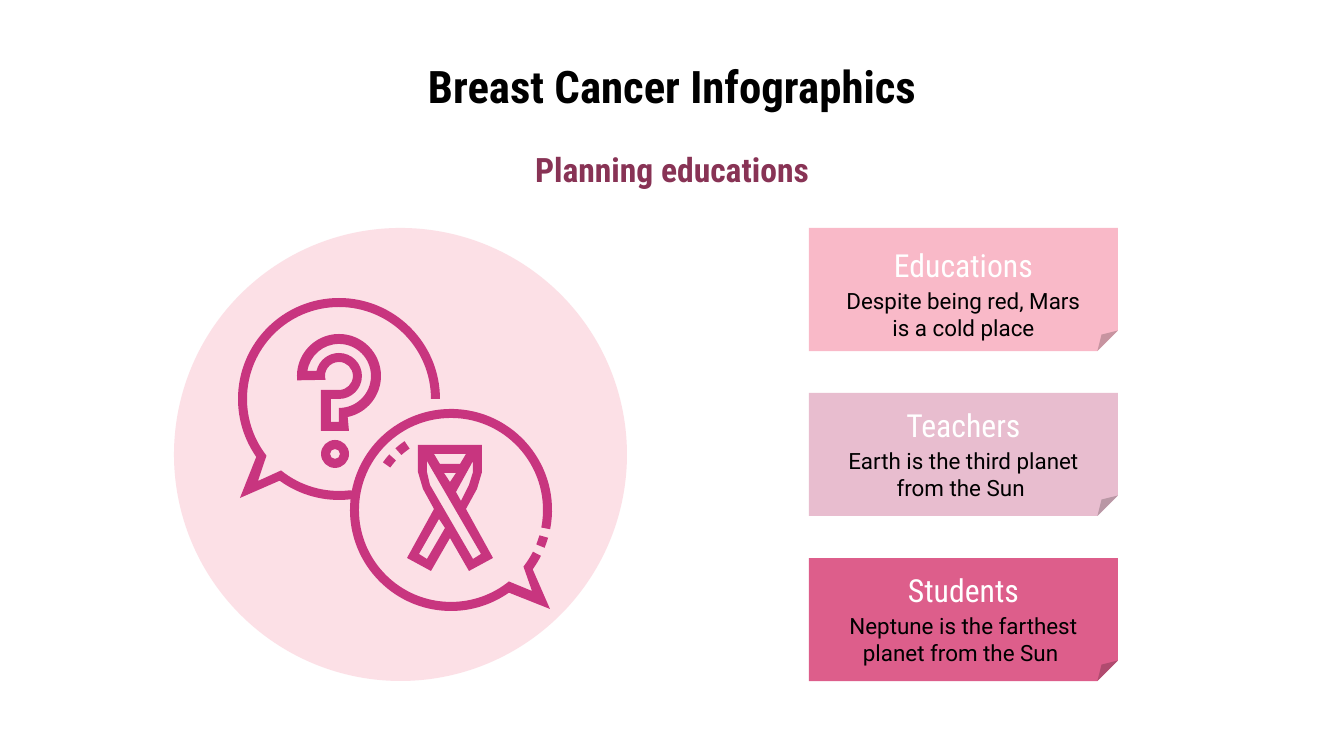
from dataclasses import dataclass
from math import cos, radians, sin, tan

from lxml import etree
from pptx import Presentation
from pptx.dml.color import RGBColor
from pptx.enum.shapes import MSO_SHAPE
from pptx.enum.text import MSO_ANCHOR, PP_ALIGN
from pptx.oxml.ns import qn
from pptx.util import Emu, Pt

ELLIPSE = MSO_SHAPE.OVAL
NOTE = MSO_SHAPE.FOLDED_CORNER
TOP, MIDDLE = MSO_ANCHOR.TOP, MSO_ANCHOR.MIDDLE
CENTER = PP_ALIGN.CENTER
EMU_PER_PX = 914400 / 134.4


@dataclass(frozen=True)
class Theme:
    heading_font: str = "Roboto Condensed"
    body_font: str = "Roboto"
    ink: str = "000000"
    white: str = "FFFFFF"
    plum: str = "883355"
    magenta: str = "C8357F"
    pink: str = "F9B9C8"
    mauve: str = "E8BDCF"
    rose: str = "DD5E8B"
    title_size: int = 24
    subtitle_size: int = 18
    card_title_size: int = 17
    body_size: int = 12


THEME = Theme()

# Speech bubbles: centre, outer and inner radius of the outline
QUESTION_CENTER, RIBBON_CENTER = (339, 399), (451, 510)
OUTER, INNER = 101, 92

# Heading, body, fill, extra text offset of each card
CARDS = [
    ("Educations", "Despite being red, Mars is a cold place", THEME.pink, 5),
    ("Teachers", "Earth is the third planet from the Sun ", THEME.mauve, 0),
    ("Students", "Neptune is the farthest planet from the Sun ", THEME.rose, 0),
]


def px(length):
    return Emu(round(length * EMU_PER_PX))


def paint(shape, color):
    shape.fill.solid()
    shape.fill.fore_color.rgb = RGBColor.from_string(color)
    shape.line.fill.background()
    shape.shadow.inherit = False


def add_filled(slide, kind, box, color):
    shape = slide.shapes.add_shape(kind, *map(px, box))
    paint(shape, color)
    return shape


def set_opacity(shape, percent):
    color = shape.fill._xPr.find(".//" + qn("a:srgbClr"))
    etree.SubElement(color, qn("a:alpha")).set("val", str(percent * 1000))


def add_text(slide, box, wording, font, size, color, bold=False, anchor=MIDDLE):
    frame = slide.shapes.add_textbox(*map(px, box)).text_frame
    frame.word_wrap = True
    frame.vertical_anchor = anchor
    frame.margin_left = frame.margin_right = px(13)
    frame.margin_top = frame.margin_bottom = px(13)
    paragraph = frame.paragraphs[0]
    paragraph.text = wording
    paragraph.alignment = CENTER
    paragraph.font.name = font
    paragraph.font.size = Pt(size)
    paragraph.font.bold = bold
    paragraph.font.color.rgb = RGBColor.from_string(color)


def corners(*points):
    """Straight segments: each holds its end point only."""
    return [[point] for point in points]


def arc(center, radius, start, end):
    """A line to the arc's start, then Bézier segments (two controls and an end).

    Degrees run clockwise from the right; the arc is split at its extremes.
    """
    def at(angle, reach=0):
        a = radians(angle)
        return (center[0] + radius * (cos(a) - reach * sin(a)),
                center[1] + radius * (sin(a) + reach * cos(a)))

    low, high = sorted((start, end))
    extremes = [a for a in range(-360, 540, 90) if low + 16 < a < high - 16]
    stops = sorted([start, *extremes, end], reverse=end < start)
    segments = [[at(start)]]
    for a, b in zip(stops, stops[1:]):
        reach = 4 / 3 * tan(radians(b - a) / 4)
        segments.append([at(a, reach), at(b, -reach), at(b)])
    return segments


def ring_segment(center, outer, inner, start, end):
    return arc(center, outer, start, end) + arc(center, inner, end, start)


def mirrored(axis, right_half):
    """Close a symmetric outline from its right half, given as offsets from the axis."""
    right = [(axis + x, y) for x, y in right_half]
    left = [(axis - x, y) for x, y in reversed(right_half) if x]
    return corners(*right, *left)


def add_outline(group, *contours):
    """Add one filled outline; contours after the first are holes."""
    builder = None
    for contour in contours:
        start, *ends = [tuple(map(px, segment[-1])) for segment in contour]
        if builder is None:
            builder = group.shapes.build_freeform(*start)
        else:
            builder.move_to(*start)
        builder.add_line_segments(ends, close=True)
    shape = builder.convert_to_shape()
    paint(shape, THEME.magenta)
    segments = [segment for contour in contours for segment in contour[1:]]
    bend(shape, segments)


def bend(shape, segments):
    """Turn the lines that stand for Bézier segments into curves."""
    lines = list(shape._element.iter(qn("a:lnTo")))
    for line, (*controls, _) in zip(lines, segments):
        if not controls:
            continue
        line.tag = qn("a:cubicBezTo")
        for index, (x, y) in enumerate(controls):
            point = etree.Element(qn("a:pt"))
            point.set("x", str(px(x) - shape.left))
            point.set("y", str(px(y) - shape.top))
            line.insert(index, point)


def add_bubbles(group):
    question, ribbon = QUESTION_CENTER, RIBBON_CENTER
    add_outline(
        group,
        arc(question, OUTER, 0, -215) + corners((240, 498))
        + arc(question, OUTER, -234, -276)
        + arc(ribbon, OUTER, 186, 55) + corners((550, 609))
        + arc(ribbon, OUTER, 36, 27)
        + arc(ribbon, INNER, 27, 38) + corners((532, 591))
        + arc(ribbon, INNER, 51, 371)
        + arc(ribbon, OUTER, 11, -169)
        + arc(question, INNER, 83, 129) + corners((258, 481))
        + arc(question, INNER, 142, 360),
    )


def add_dash(group, outer, inner, start, end):
    add_outline(group, ring_segment(RIBBON_CENTER, outer, inner, start, end))


def add_question_mark(group):
    hook, dot = (339, 376), (335, 454)
    add_outline(
        group,
        arc(hook, 42, 174, 438) + corners((349, 431), (321, 431), (321, 390))
        + arc(hook, 14, 90, -196),
        arc(hook, 32, 189, 450) + corners((339, 422), (331, 422), (331, 399))
        + arc(hook, 23, 90, -167),
    )
    add_outline(group, arc(dot, 14, 0, 360), arc(dot, 5, 0, 360))


def add_ribbon(group):
    axis = 450
    silhouette = mirrored(axis, [
        (32, 445), (32, 472), (27, 489), (16, 509), (43, 558), (19, 571), (0, 538),
    ])
    top_gap = mirrored(axis, [(16, 454), (10, 464)])
    loop_gap = mirrored(axis, [(6, 473), (0, 482)])
    right_gap = corners((473, 461), (473, 472), (469, 485), (461, 501), (456, 492))
    foot_gap = corners((439, 519), (445, 528), (427, 559), (419, 554))
    strand_gap = corners((427, 461), (481, 554), (473, 559), (430, 485), (427, 472))
    add_outline(group, silhouette, top_gap, loop_gap, right_gap, foot_gap, strand_gap)


def add_card(slide, top, heading, body, color, text_offset):
    add_filled(slide, NOTE, (809, top, 309, 123), color)
    text_top = top + text_offset
    add_text(slide, (827, text_top + 42, 273, 78), body,
             THEME.body_font, THEME.body_size, THEME.ink)
    add_text(slide, (827, text_top, 273, 63), heading,
             THEME.heading_font, THEME.card_title_size, THEME.white)


def main():
    deck = Presentation()
    deck.slide_width, deck.slide_height = px(1344), px(756)
    slide = deck.slides.add_slide(deck.slide_layouts[6])

    backdrop = add_filled(slide, ELLIPSE, (174, 228, 453, 453), THEME.pink)
    set_opacity(backdrop, 44)
    add_text(slide, (26, 46, 1292, 85), "Breast Cancer Infographics",
             THEME.heading_font, THEME.title_size, THEME.ink, bold=True, anchor=TOP)

    icon = slide.shapes.add_group_shape()
    add_dash(icon, OUTER, INNER, 16, 22)
    add_bubbles(icon)
    add_ribbon(icon)
    add_question_mark(icon)
    add_dash(icon, 83, 74, 215, 222)
    add_dash(icon, 83, 74, 228, 236)

    for row, card in enumerate(CARDS):
        add_card(slide, 228 + 165 * row, *card)
    add_text(slide, (420, 142, 504, 54), "Planning educations",
             THEME.heading_font, THEME.subtitle_size, THEME.plum, bold=True)

    deck.save("out.pptx")


if __name__ == "__main__":
    main()
